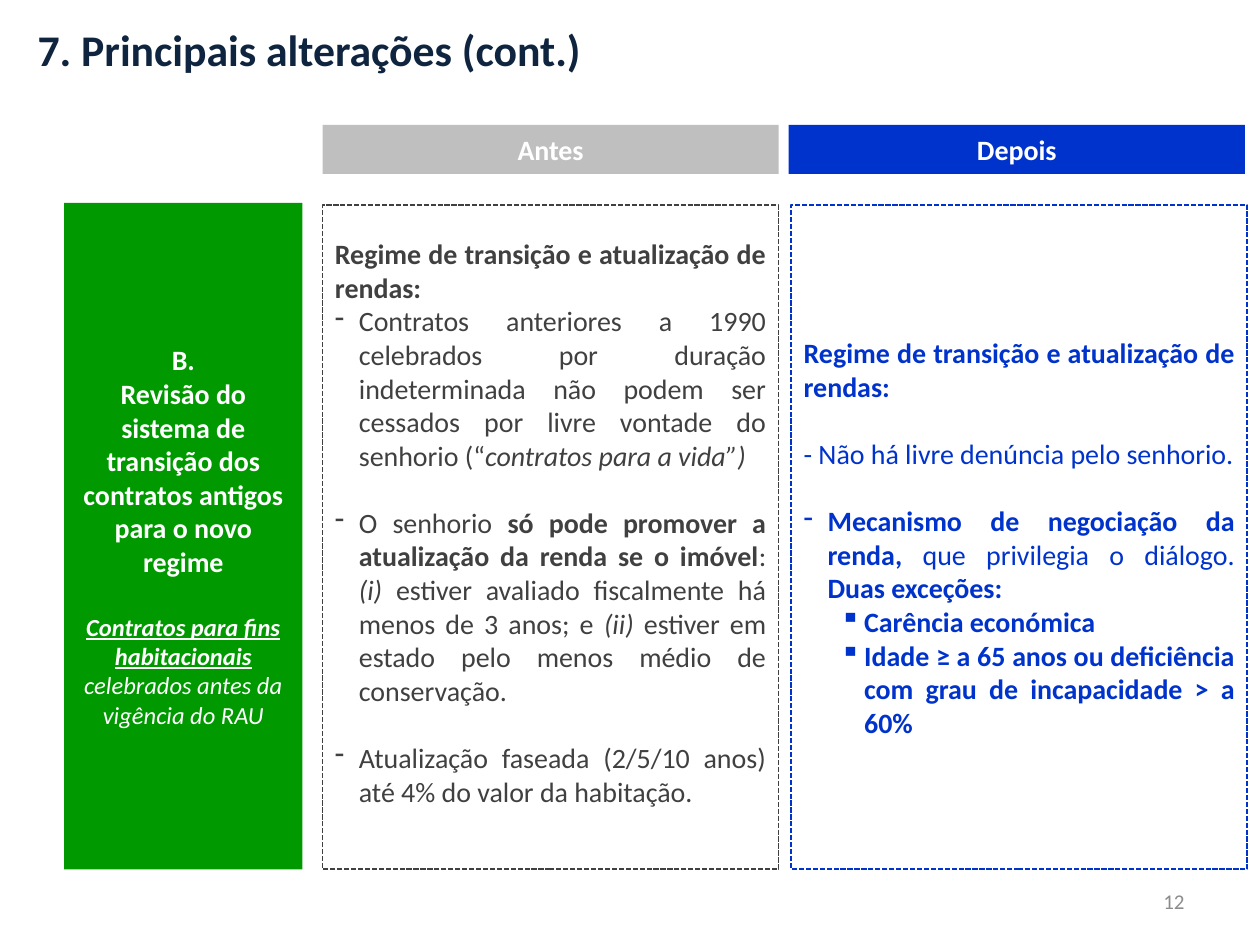
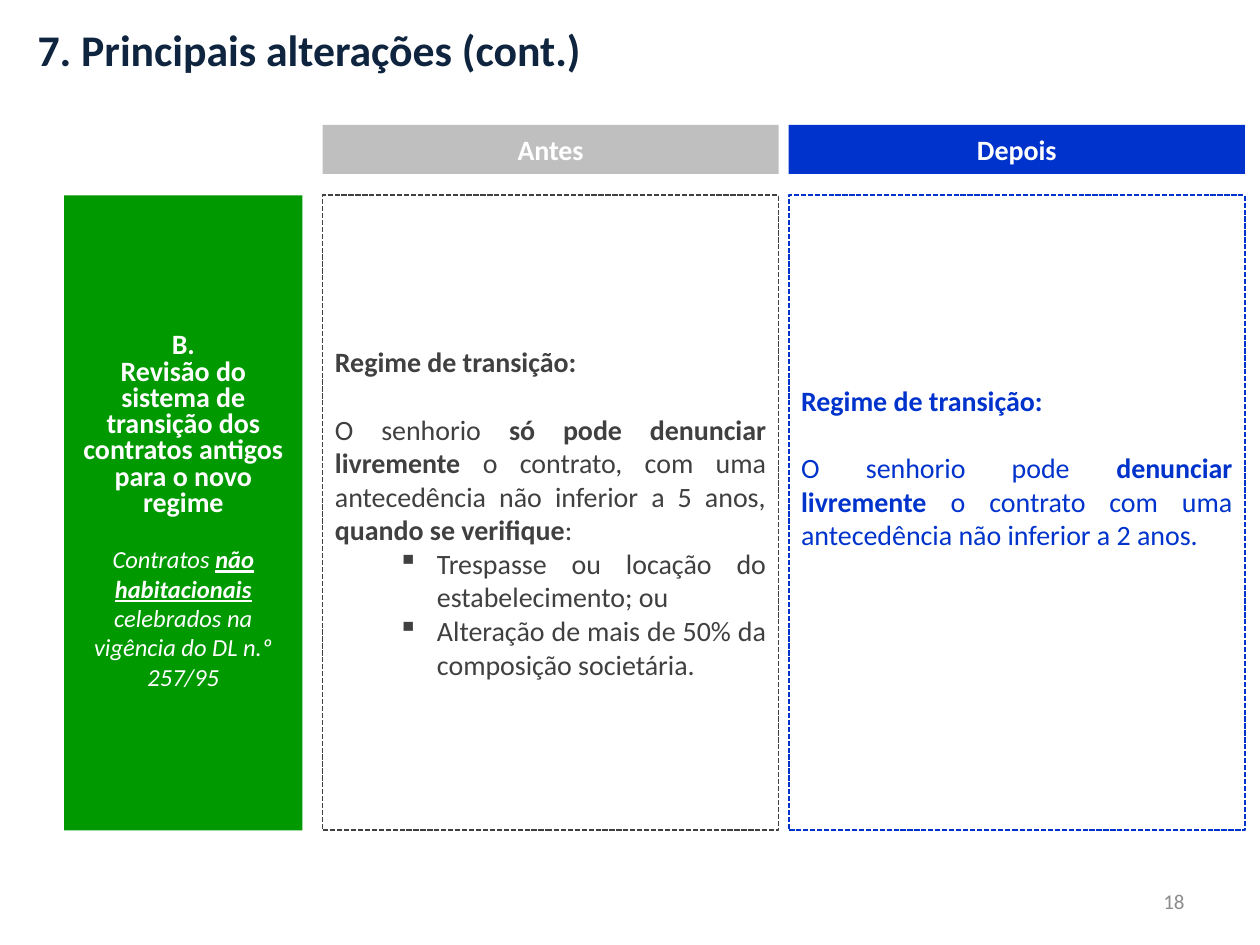
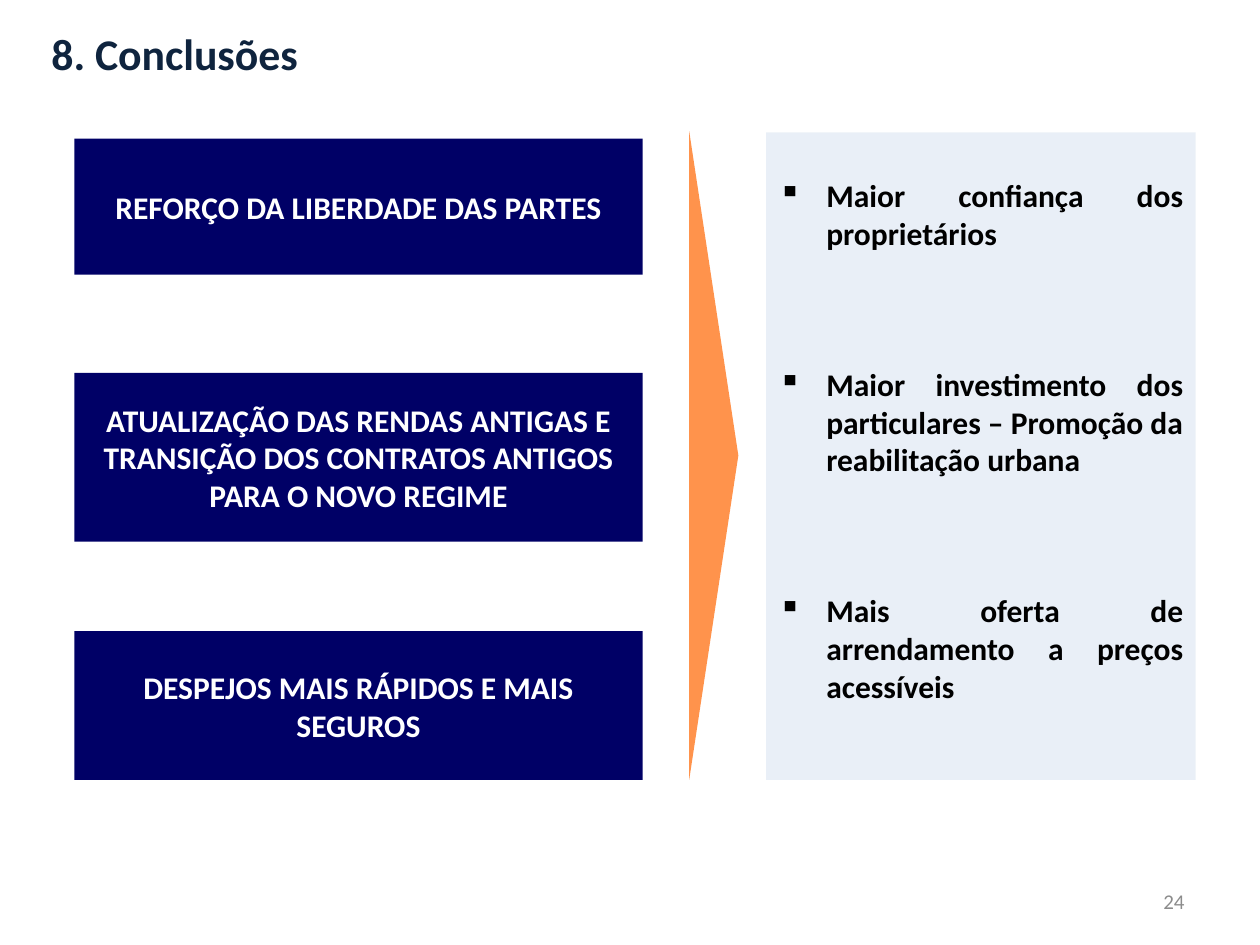
from dataclasses import dataclass

from lxml import etree
from pptx import Presentation
from pptx.dml.color import RGBColor
from pptx.enum import dml, shapes, text
from pptx.oxml.ns import qn
from pptx.util import Inches, Pt

# Shared look
FONT = "Calibri"
TITLE_NAVY = RGBColor(0x0F, 0x24, 0x3E)
WHITE = RGBColor(0xFF, 0xFF, 0xFF)
BLACK = RGBColor(0x00, 0x00, 0x00)
LIGHT_GREY = RGBColor(0xBF, 0xBF, 0xBF)
DARK_GREY = RGBColor(0x40, 0x40, 0x40)
NUMBER_GREY = RGBColor(0x8C, 0x8C, 0x8C)
BLUE = RGBColor(0x00, 0x33, 0xCC)
GREEN = RGBColor(0x00, 0x99, 0x00)
NAVY = RGBColor(0x00, 0x00, 0x66)
ORANGE = RGBColor(0xFF, 0x66, 0x00)
PALE_BLUE = RGBColor(0xB9, 0xCD, 0xE5)

LEFT, CENTER, RIGHT, JUSTIFY = (
    text.PP_ALIGN.LEFT, text.PP_ALIGN.CENTER, text.PP_ALIGN.RIGHT, text.PP_ALIGN.JUSTIFY)
TOP, MIDDLE = text.MSO_ANCHOR.TOP, text.MSO_ANCHOR.MIDDLE

# Comparison grid
COLUMN_WIDTH = 3.62
BEFORE_LEFT, AFTER_LEFT = 2.56, 6.26
GAP = 19.2  # one line of 16 pt text


@dataclass
class Para:
    """Runs are (text, style) pairs; style holds any of b, i, u."""
    runs: list
    size: float = 16
    before: float = 0
    bullet: str = ""
    margin: float = 0
    hanging: float = 0
    line: float = 0


def dash(*runs, before=0):
    return Para(list(runs), before=before, bullet="-", margin=0.19, hanging=0.19)


def square(content, style, margin, hanging, size=16, before=0):
    return Para([(content, style)], size, before, "▪", margin, hanging)


def write(shape, paras, color, align, anchor=MIDDLE, wrap=True):
    frame = shape.text_frame
    frame.word_wrap = wrap
    frame.vertical_anchor = anchor
    for index, para in enumerate(paras):
        paragraph = frame.add_paragraph() if index else frame.paragraphs[0]
        paragraph.alignment = align
        paragraph.space_before = Pt(para.before)
        if para.line:
            paragraph.line_spacing = Pt(para.line)
        if para.bullet:
            properties = paragraph._p.get_or_add_pPr()
            properties.set("marL", str(Inches(para.margin)))
            properties.set("indent", str(-Inches(para.hanging)))
            etree.SubElement(properties, qn("a:buChar")).set("char", para.bullet)
        for content, style in para.runs:
            run = paragraph.add_run()
            run.text = content
            font = run.font
            font.name, font.size, font.color.rgb = FONT, Pt(para.size), color
            font.bold, font.italic, font.underline = (mark in style for mark in "biu")


def add_shape(slide, box, fill=None, opacity=100, border=None,
              kind=shapes.MSO_SHAPE.RECTANGLE):
    shape = slide.shapes.add_shape(kind, *map(Inches, box))
    shape.shadow.inherit = False
    if fill is None:
        shape.fill.background()
    else:
        shape.fill.solid()
        shape.fill.fore_color.rgb = fill
        if opacity < 100:
            color = shape.fill._xPr.find(".//" + qn("a:srgbClr"))
            etree.SubElement(color, qn("a:alpha")).set("val", str(opacity * 1000))
    if border is None:
        shape.line.fill.background()
    else:
        shape.line.color.rgb = border
        shape.line.width = Pt(1)
        shape.line.dash_style = dml.MSO_LINE.SQUARE_DOT
    return shape


def add_label(slide, box, content, fill, size):
    write(add_shape(slide, box, fill), [Para([(content, "b")], size)], WHITE, CENTER)


def add_frame(slide, box, title, number):
    """Slide title and page number."""
    title_box = slide.shapes.add_textbox(*map(Inches, box))
    write(title_box, [Para([(title, "b")], 25)], TITLE_NAVY, LEFT, TOP, wrap=False)
    number_box = slide.shapes.add_textbox(*map(Inches, (7.17, 6.95, 2.33, 0.4)))
    write(number_box, [Para([(number, "")], 12)], NUMBER_GREY, RIGHT)


def add_column(slide, box, paras, color, bottom_inset):
    shape = add_shape(slide, box, border=color)
    shape.text_frame.margin_bottom = Inches(bottom_inset)
    write(shape, paras, color, JUSTIFY)


def add_topic(slide, box, contracts, line):
    """Green box naming the topic and the contracts it covers."""
    heading = [
        Para([("B.", "b")], line=line),
        Para([("Revisão do sistema de transição dos contratos antigos "
               "para o novo regime", "b")], line=line),
    ]
    note = Para(contracts, 14, before=line or GAP)
    write(add_shape(slide, box, GREEN), heading + [note], WHITE, CENTER)


def comparison_slide(slide, number, top, bottom, contracts, before, after,
                     before_inset=0.05, after_inset=0.05, after_left=AFTER_LEFT,
                     topic_top=None, topic_line=0):
    add_frame(slide, (0.2, 0.13, 4.74, 0.52), "7. Principais alterações (cont.)", number)
    # Column headings
    for left, name, fill in ((BEFORE_LEFT, "Antes", LIGHT_GREY), (AFTER_LEFT, "Depois", BLUE)):
        add_label(slide, (left, 0.99, COLUMN_WIDTH, 0.39), name, fill, 16)
    # Body
    topic_top = topic_top or top
    add_topic(slide, (0.51, topic_top, 1.89, bottom - topic_top), contracts, topic_line)
    for left, paras, color, inset in ((BEFORE_LEFT, before, DARK_GREY, before_inset),
                                      (after_left, after, BLUE, after_inset)):
        add_column(slide, (left, top, COLUMN_WIDTH, bottom - top), paras, color, inset)


def add_pointer(slide, box):
    """Triangle pointing right that fills the given box."""
    left, top, width, height = box
    shift = (height - width) / 2
    triangle = add_shape(slide, (left - shift, top + shift, height, width), ORANGE, 70,
                         kind=shapes.MSO_SHAPE.ISOSCELES_TRIANGLE)
    triangle.rotation = 90
    triangle.adjustments[0] = 0.5


def add_outcomes(slide, box, outcomes):
    panel = add_shape(slide, box, PALE_BLUE, 30)
    panel.text_frame.margin_top = Inches(0.35)
    paras = [square(outcome, "b", 0.38, 0.38, 18, before=64.5 if index else 0)
             for index, outcome in enumerate(outcomes)]
    write(panel, paras, BLACK, JUSTIFY, TOP)


def conclusions_slide(slide, number):
    add_frame(slide, (0.31, 0.16, 2.18, 0.52), "8. Conclusões", number)
    measures = (
        (1.1, 1.08, "REFORÇO DA LIBERDADE DAS PARTES"),
        (2.96, 1.34, "ATUALIZAÇÃO DAS RENDAS ANTIGAS E TRANSIÇÃO DOS CONTRATOS "
                     "ANTIGOS PARA O NOVO REGIME"),
        (5.01, 1.18, "DESPEJOS MAIS RÁPIDOS E MAIS SEGUROS"),
    )
    for top, height, measure in measures:
        add_label(slide, (0.59, top, 4.51, height), measure, NAVY, 18)
    add_pointer(slide, (5.47, 1.04, 0.39, 5.15))
    add_outcomes(slide, (6.08, 1.05, 3.41, 5.14), (
        "Maior confiança dos proprietários",
        "Maior investimento dos particulares – Promoção da reabilitação urbana",
        "Mais oferta de arrendamento a preços acessíveis",
    ))


def housing_slide(slide):
    heading = "Regime de transição e atualização de rendas:"
    before = [
        Para([(heading, "b")]),
        dash(("Contratos anteriores a 1990 celebrados por duração indeterminada não podem "
              "ser cessados por livre vontade do senhorio (“", ""),
             ("contratos para a vida”)", "i")),
        dash(("O senhorio ", ""),
             ("só pode promover a atualização da renda se o imóvel", "b"), (": ", ""),
             ("(i)", "i"), (" estiver avaliado fiscalmente há menos de 3 anos; e ", ""),
             ("(ii)", "i"), (" estiver em estado pelo menos médio de conservação.", ""),
             before=GAP),
        dash(("Atualização faseada (2/5/10 anos) até 4% do valor da habitação.", ""),
             before=GAP),
    ]
    after = [
        Para([(heading, "b")]),
        Para([("- Não há livre denúncia pelo senhorio.", "")], before=GAP),
        dash(("Mecanismo de negociação da renda, ", "b"), ("que privilegia o diálogo. ", ""),
             ("Duas exceções:", "b"), before=GAP),
        square("Carência económica", "b", 0.48, 0.19),
        square("Idade ≥ a 65 anos ou deficiência com grau de incapacidade > a 60%",
               "b", 0.48, 0.19),
    ]
    contracts = [("Contratos para fins habitacionais ", "biu"),
                 ("celebrados antes da vigência do RAU", "i")]
    comparison_slide(slide, "12", 1.63, 6.9, contracts, before, after,
                     before_inset=0.29, after_left=6.28, topic_top=1.61)


def business_slide(slide):
    heading = Para([("Regime de transição:", "b")])
    before = [
        heading,
        Para([("O senhorio ", ""), ("só pode denunciar livremente", "b"),
              (" o contrato, com uma antecedência não inferior a 5 anos, ", ""),
              ("quando se verifique", "b"), (":", "")], before=GAP),
        square("Trespasse ou locação do estabelecimento; ou", "", 0.81, 0.31),
        square("Alteração de mais de 50% da composição societária.", "", 0.81, 0.31),
    ]
    after = [
        heading,
        Para([("O senhorio pode ", ""), ("denunciar livremente ", "b"),
              ("o contrato com uma antecedência não inferior a 2 anos.", "")], before=GAP),
    ]
    contracts = [("Contratos ", "i"), ("não habitacionais", "biu"),
                 (" celebrados na vigência do DL n.º 257/95", "i")]
    comparison_slide(slide, "18", 1.55, 6.59, contracts, before, after,
                     after_inset=0.77, topic_line=15)


def main():
    presentation = Presentation()
    presentation.slide_width, presentation.slide_height = Inches(10), Inches(7.5)
    blank = presentation.slide_layouts[6]
    housing_slide(presentation.slides.add_slide(blank))
    business_slide(presentation.slides.add_slide(blank))
    conclusions_slide(presentation.slides.add_slide(blank), "24")
    presentation.save("out.pptx")


if __name__ == "__main__":
    main()
